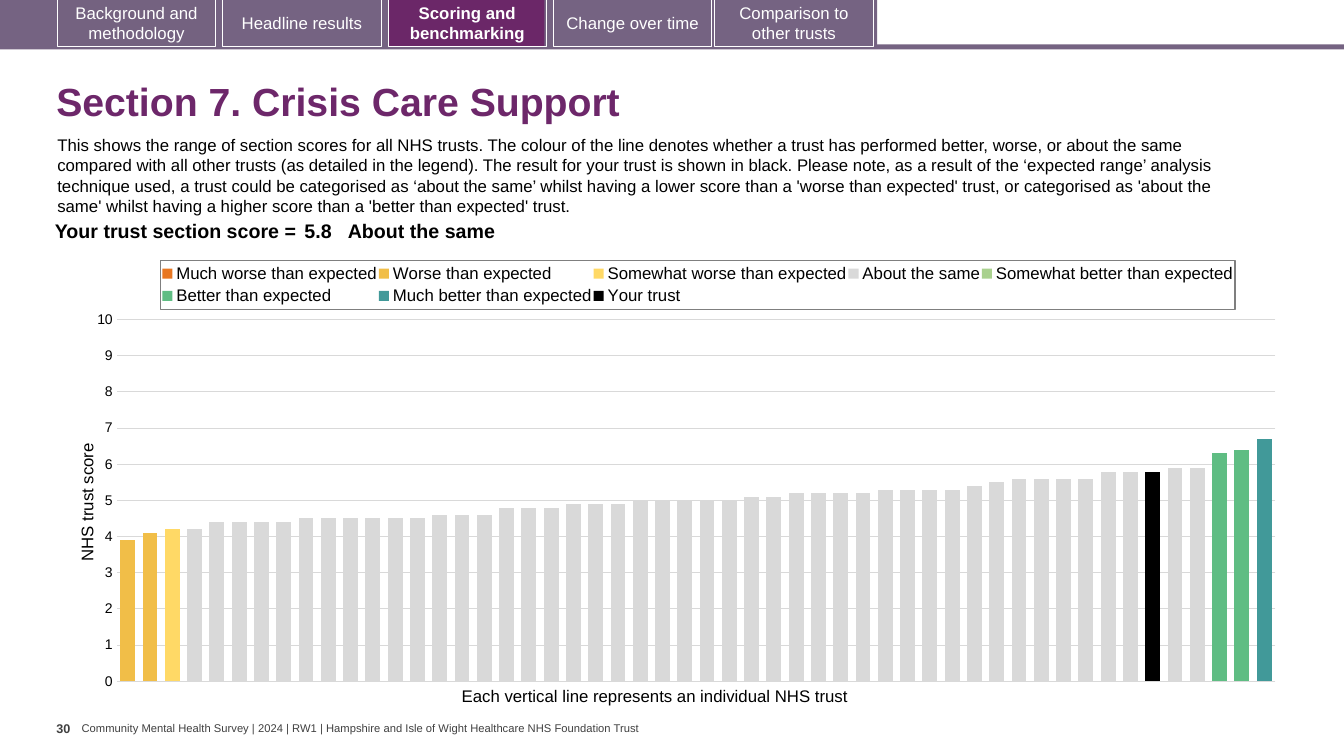
from copy import deepcopy

from lxml import etree
from pptx import Presentation
from pptx.chart.data import CategoryChartData
from pptx.dml.color import RGBColor
from pptx.enum.chart import XL_CHART_TYPE, XL_LEGEND_POSITION, XL_TICK_MARK
from pptx.enum.shapes import MSO_SHAPE
from pptx.enum.text import MSO_ANCHOR, PP_ALIGN
from pptx.oxml import parse_xml
from pptx.oxml.ns import nsdecls, qn
from pptx.util import Inches, Pt

COLUMNS = XL_CHART_TYPE.COLUMN_CLUSTERED
LEGEND_TOP = XL_LEGEND_POSITION.TOP
NO_TICKS = XL_TICK_MARK.NONE
RECTANGLE = MSO_SHAPE.RECTANGLE
MIDDLE = MSO_ANCHOR.MIDDLE
TOP = MSO_ANCHOR.TOP
LEFT, CENTER, RIGHT = PP_ALIGN.LEFT, PP_ALIGN.CENTER, PP_ALIGN.RIGHT

COLORS = {
    "bar": "756382", "tab": "746280", "active": "6B2768", "title": "6D276A",
    "white": "FFFFFF", "black": "000000", "footer": "404040",
    "grid": "D9D9D9", "legend": "7F7F7F",
}
TABS = [
    (0.57, "Background and methodology", "tab", False),
    (2.21, "Headline results", None, False),
    (3.85, "Scoring and benchmarking", None, True),
    (5.49, "Change over time", "bar", False),
    (7.09, "Comparison to other trusts", "bar", False),
]
INTRO = (
    "This shows the range of section scores for all NHS trusts. The colour of the line "
    "denotes whether a trust has performed better, worse, or about the same compared with "
    "all other trusts (as detailed in the legend). The result for your trust is shown in "
    "black. Please note, as a result of the ‘expected range’ analysis technique used, a "
    "trust could be categorised as ‘about the same’ whilst having a lower score than a "
    "'worse than expected' trust, or categorised as 'about the same' whilst having a higher "
    "score than a 'better than expected' trust."
)
FOOTER = ("Community Mental Health Survey | 2024 | RW1 | "
          "Hampshire and Isle of Wight Healthcare NHS Foundation Trust")
TRUST_COUNT = 52
SAME_SCORES = [
    4.2, 4.4, 4.4, 4.4, 4.4, 4.5, 4.5, 4.5, 4.5, 4.5, 4.5, 4.6, 4.6, 4.6, 4.8, 4.8,
    4.8, 4.9, 4.9, 4.9, 5, 5, 5, 5, 5, 5.1, 5.1, 5.2, 5.2, 5.2, 5.2, 5.3, 5.3, 5.3,
    5.3, 5.4, 5.5, 5.6, 5.6, 5.6, 5.6, 5.8, 5.8, 5.8, 5.9, 5.9,
]
BANDS = [
    ("Much worse than expected", "E87722", 0, []),
    ("Worse than expected", "F1BE48", 0, [3.9, 4.1]),
    ("Somewhat worse than expected", "FFD966", 2, [4.2]),
    ("About the same", "D9D9D9", 3, SAME_SCORES),
    ("Somewhat better than expected", "A9D18E", 0, []),
    ("Better than expected", "5FBD83", 49, [6.3, 6.4]),
    ("Much better than expected", "419999", 51, [6.7]),
    ("Your trust", "000000", 46, [5.8]),
]


def rgb(name):
    return RGBColor.from_string(COLORS[name])


def style_font(font, size, color="black", bold=False):
    font.name = "Arial"
    font.size = Pt(size)
    font.bold = bold
    font.color.rgb = rgb(color)


def write_text(frame, text, size, color="black", bold=False, align=LEFT):
    frame.text = text
    para = frame.paragraphs[0]
    para.alignment = align
    style_font(para.runs[0].font, size, color, bold)
    return para


def add_rectangle(page, left, top, width, height, fill=None):
    box = page.shapes.add_shape(RECTANGLE, Inches(left), Inches(top),
                                Inches(width), Inches(height))
    box.shadow.inherit = False
    box.line.fill.background()
    if fill:
        box.fill.solid()
        box.fill.fore_color.rgb = rgb(fill)
    else:
        box.fill.background()
    return box


def add_tab(page, left, label, fill, bold):
    tab = add_rectangle(page, left, -0.01, 1.57, 0.47, fill)
    tab.line.color.rgb = rgb("white")
    tab.line.width = Pt(0.75)
    tab.text_frame.vertical_anchor = MIDDLE
    write_text(tab.text_frame, label, 12, "white", bold, CENTER)


def add_text(page, left, top, width, height, text, size, color="black", bold=False,
             wrap=True, anchor=TOP, insets=(0.1, 0.05)):
    box = page.shapes.add_textbox(Inches(left), Inches(top), Inches(width), Inches(height))
    frame = box.text_frame
    frame.word_wrap = wrap
    frame.vertical_anchor = anchor
    frame.margin_left = frame.margin_right = Inches(insets[0])
    frame.margin_top = frame.margin_bottom = Inches(insets[1])
    return write_text(frame, text, size, color, bold)


def add_score_table(page):
    columns = [(2.63, "Your trust section score =", RIGHT, 0.04),
               (0.47, "5.8", LEFT, 0.04), (8.59, "About the same", LEFT, 0)]
    table = page.shapes.add_table(1, len(columns), Inches(0.35), Inches(2.15),
                                  Inches(11.69), Inches(0.31)).table
    table.first_row = False
    table.horz_banding = False
    for index, (width, text, align, side) in enumerate(columns):
        table.columns[index].width = Inches(width)
        cell = table.cell(0, index)
        cell.fill.background()
        cell.margin_left = cell.margin_right = Inches(side)
        cell.margin_top = cell.margin_bottom = Inches(0.04)
        write_text(cell.text_frame, text, 14, bold=True, align=align)


def set_layout(parent, inner=False, **places):
    for old in parent.findall(qn("c:layout")):
        parent.remove(old)
    layout = etree.Element(qn("c:layout"))
    manual = etree.SubElement(layout, qn("c:manualLayout"))
    settings = [("layoutTarget", "inner")] if inner else []
    settings += [("xMode", "edge"), ("yMode", "edge")] + list(places.items())
    for tag, value in settings:
        etree.SubElement(manual, qn("c:" + tag)).set("val", str(value))
    overlay = parent.find(qn("c:overlay"))
    parent.insert(0 if overlay is None else parent.index(overlay), layout)


def move_last_series_to_right_axis(plot_area):
    bars = plot_area.find(qn("c:barChart"))
    right_bars = deepcopy(bars)
    bars.remove(bars.findall(qn("c:ser"))[-1])
    for series in right_bars.findall(qn("c:ser"))[:-1]:
        right_bars.remove(series)
    bars.addnext(right_bars)
    categories = deepcopy(plot_area.find(qn("c:catAx")))
    values = deepcopy(plot_area.find(qn("c:valAx")))
    for tag in ("c:majorGridlines", "c:title"):
        values.remove(values.find(qn(tag)))
    for tag, value in (("axPos", "r"), ("tickLblPos", "none"), ("crosses", "max")):
        values.find(qn("c:" + tag)).set("val", value)
    ids = {axis.find(qn("c:axId")).get("val"): number
           for axis, number in ((categories, "5001"), (values, "5002"))}
    for part in (right_bars, categories, values):
        for tag in ("c:axId", "c:crossAx"):
            for link in part.findall(qn(tag)):
                link.set("val", ids[link.get("val")])
    last_axis = plot_area.find(qn("c:valAx"))
    last_axis.addnext(values)
    values.addnext(categories)


def style_value_axis(axis):
    axis.minimum_scale, axis.maximum_scale, axis.major_unit = 0, 10, 1
    axis.major_tick_mark = axis.minor_tick_mark = NO_TICKS
    axis.format.line.fill.background()
    axis.major_gridlines.format.line.color.rgb = rgb("grid")
    axis.major_gridlines.format.line.width = Pt(0.75)
    style_font(axis.tick_labels.font, 10)
    axis.tick_labels.number_format = "0"
    axis.tick_labels.number_format_is_linked = False
    title = axis.axis_title
    write_text(title.text_frame, "NHS trust score", 12, align=CENTER)
    body = next(title._element.iter(qn("a:bodyPr")))
    body.set("rot", "-5400000")
    body.set("vert", "horz")
    set_layout(title._element, x=0.005, y=0.427)


def style_legend(chart):
    chart.has_legend = True
    legend = chart.legend
    legend.position = LEGEND_TOP
    legend.include_in_layout = False
    style_font(legend.font, 12)
    set_layout(legend._element, x=0.076, y=0.025, w=0.877, h=0.11)
    border = parse_xml(
        f'<c:spPr {nsdecls("c", "a")}><a:noFill/><a:ln w="9525"><a:solidFill>'
        f'<a:srgbClr val="{COLORS["legend"]}"/></a:solidFill></a:ln></c:spPr>')
    legend._element.find(qn("c:overlay")).addnext(border)


def add_score_chart(page):
    data = CategoryChartData()
    data.categories = [str(number) for number in range(1, TRUST_COUNT + 1)]
    for name, color, start, scores in BANDS:
        after = TRUST_COUNT - start - len(scores)
        data.add_series(name, [None] * start + scores + [None] * after)
    chart = page.shapes.add_chart(COLUMNS, Inches(0.67), Inches(2.47),
                                  Inches(12.15), Inches(4.44), data).chart
    chart.has_title = False
    style_font(chart.font, 10)
    plot = chart.plots[0]
    plot.gap_width, plot.overlap, plot.vary_by_categories = 50, 100, False
    for series, (name, color, start, scores) in zip(plot.series, BANDS):
        series.format.fill.solid()
        series.format.fill.fore_color.rgb = RGBColor.from_string(color)
    chart.category_axis.visible = False
    style_value_axis(chart.value_axis)
    style_legend(chart)
    plot_area = chart._chartSpace.chart.plotArea
    set_layout(plot_area, inner=True, x=0.04, y=0.158, w=0.946, h=0.808)
    move_last_series_to_right_axis(plot_area)


def main():
    deck = Presentation()
    deck.slide_width, deck.slide_height = Inches(13.33), Inches(7.5)
    page = deck.slides.add_slide(deck.slide_layouts[6])
    add_text(page, 0.81, 7.16, 5.6, 0.13, FOOTER, 8, "footer",
             wrap=False, anchor=MIDDLE, insets=(0, 0))
    add_rectangle(page, 0, 0.44, 13.33, 0.05, "bar")
    add_rectangle(page, 0, 0, 8.7, 0.47, "bar")
    add_rectangle(page, 3.86, 0, 1.54, 0.46, "active")
    for tab in TABS:
        add_tab(page, *tab)
    title = add_text(page, 0.46, 0.67, 12.49, 0.72, "Section 7. Crisis Care Support",
                     28, "title", True, anchor=MIDDLE)
    title.line_spacing = 0.9
    add_text(page, 0.56, 7.1, 0.25, 0.4, "30", 9, "footer", True,
             wrap=False, insets=(0, 0.05))
    add_text(page, 0.47, 1.29, 12.13, 0.91, INTRO, 12)
    add_text(page, 4.48, 6.75, 4.11, 0.3,
             "Each vertical line represents an individual NHS trust", 12, wrap=False)
    add_score_chart(page)
    add_score_table(page)
    deck.save("out.pptx")


if __name__ == "__main__":
    main()
